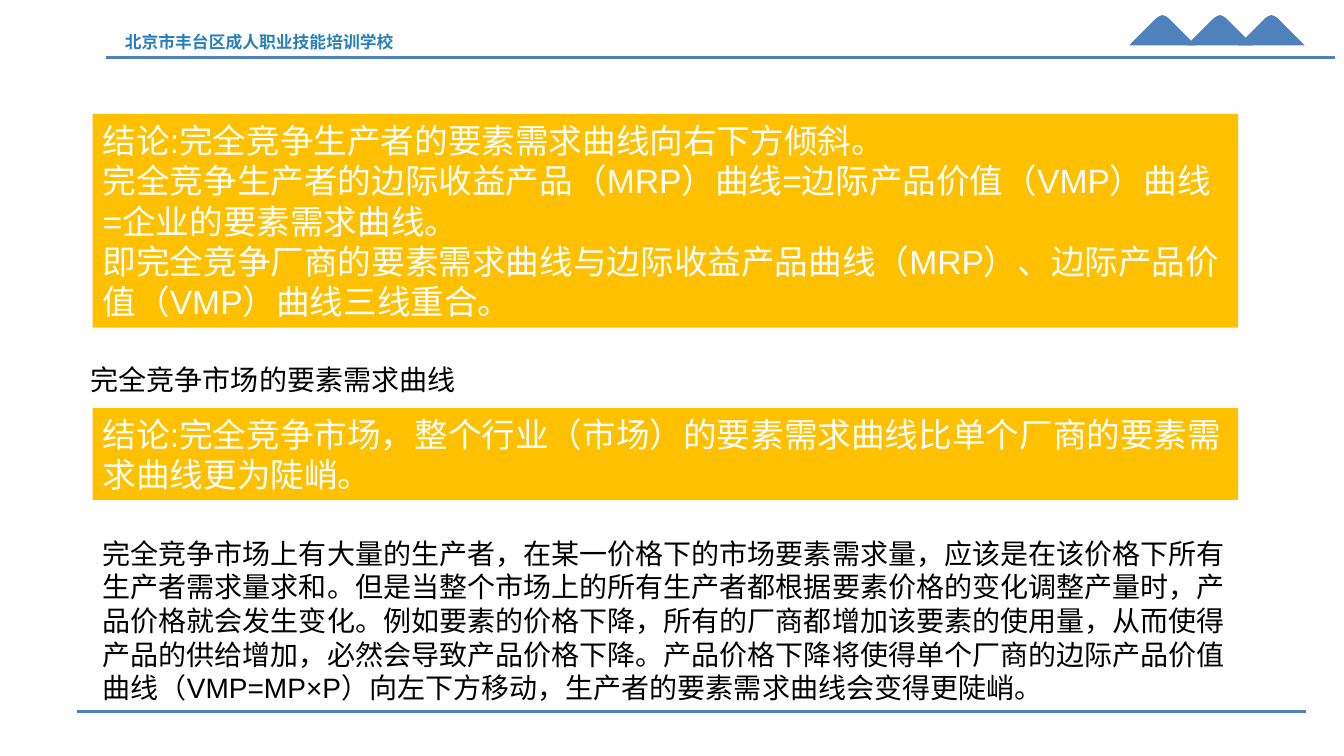
from dataclasses import dataclass

from pptx import Presentation
from pptx.dml.color import RGBColor as Rgb
from pptx.enum.shapes import MSO_CONNECTOR as Link, MSO_SHAPE as Form
from pptx.enum.text import MSO_ANCHOR as Anchor, MSO_AUTO_SIZE as Fit, PP_ALIGN as Align
from pptx.oxml.ns import qn
from pptx.util import Pt

SCALE = 9144


@dataclass(frozen=True)
class Theme:
    face: str = "Arial"
    blue: str = "4F81BD"
    brand: str = "2980B9"
    gold: str = "FFC000"
    white: str = "FFFFFF"
    black: str = "000000"
    small: int = 12
    body: int = 20
    large: int = 24
    rule: float = 2.25


def px(*vals):
    return [val * SCALE for val in vals]


class Page:
    def __init__(self, slide, theme):
        self.slide = slide
        self.shapes = slide.shapes
        self.theme = theme

    def label(self, shape, lines, size, color, bold=False, wrap=True, anchor=Anchor.TOP):
        frame = shape.text_frame
        frame.auto_size = Fit.NONE
        frame.word_wrap = wrap
        frame.vertical_anchor = anchor
        frame.text = "\n".join(lines)
        for para in frame.paragraphs:
            para.alignment = Align.LEFT
            font = para.font
            font.name = self.theme.face
            font.size = Pt(size)
            font.bold = bold
            font.color.rgb = Rgb.from_string(color)

    def paint(self, shape, color):
        shape.shadow.inherit = False
        shape.fill.solid()
        shape.fill.fore_color.rgb = Rgb.from_string(color)
        shape.line.fill.background()

    def title(self, box, text):
        shape = self.shapes.title
        shape.left, shape.top, shape.width, shape.height = px(*box)
        self.label(shape, [text], self.theme.body, self.theme.black, wrap=False)

    def text(self, box, text, size, color, bold=False):
        self.label(self.shapes.add_textbox(*px(*box)), [text], size, color, bold)

    def panel(self, box, lines):
        shape = self.shapes.add_shape(Form.RECTANGLE, *px(*box))
        self.paint(shape, self.theme.gold)
        self.label(shape, lines, self.theme.large, self.theme.white, anchor=Anchor.MIDDLE)

    def rule(self, left, right, top):
        line = self.shapes.add_connector(Link.STRAIGHT, *px(left, top, right, top))
        line.line.color.rgb = Rgb.from_string(self.theme.blue)
        line.line.width = Pt(self.theme.rule)
        props = line._element.spPr
        props.append(props.makeelement(qn("a:effectLst"), {}))

    def peak(self, mid):
        half = [(3, 16), (6, 18), (31, 43), (33, 45)]
        right = [(mid + dx, y) for dx, y in half]
        left = [(mid - dx, y) for dx, y in reversed(half)]
        form = self.shapes.build_freeform(mid, 15, scale=SCALE)
        form.add_line_segments(right + left, close=True)
        self.paint(form.convert_to_shape(), self.theme.blue)


def main():
    deck = Presentation()
    deck.slide_width, deck.slide_height = px(1333, 750)
    theme = Theme()
    page = Page(deck.slides.add_slide(deck.slide_layouts[5]), theme)

    page.rule(105, 1324, 57)
    page.text((114, 27, 307, 30), "北京市丰台区成人职业技能培训学校",
              theme.small, theme.brand, bold=True)
    for mid in (1153, 1210, 1261):
        page.peak(mid)
    page.rule(76, 1295, 706)

    page.panel((92, 113, 1136, 212), [
        "结论:完全竞争生产者的要素需求曲线向右下方倾斜。",
        "完全竞争生产者的边际收益产品（MRP）曲线=边际产品价值（VMP）曲线=企业的要素需求曲线。",
        "即完全竞争厂商的要素需求曲线与边际收益产品曲线（MRP）、边际产品价值（VMP）曲线三线重合。",
    ])
    page.title((80, 355, 385, 44), "完全竞争市场的要素需求曲线")
    page.panel((92, 405, 1136, 91), [
        "结论:完全竞争市场，整个行业（市场）的要素需求曲线比单个厂商的要素需求曲线更为陡峭。",
    ])
    page.text(
        (92, 527, 1136, 178),
        "完全竞争市场上有大量的生产者，在某一价格下的市场要素需求量，应该是在该价格下所有生产者需求量求和。"
        "但是当整个市场上的所有生产者都根据要素价格的变化调整产量时，产品价格就会发生变化。"
        "例如要素的价格下降，所有的厂商都增加该要素的使用量，从而使得产品的供给增加，必然会导致产品价格下降。"
        "产品价格下降将使得单个厂商的边际产品价值曲线（VMP=MP×P）向左下方移动，"
        "生产者的要素需求曲线会变得更陡峭。",
        theme.body, theme.black)

    deck.save("out.pptx")


if __name__ == "__main__":
    main()
